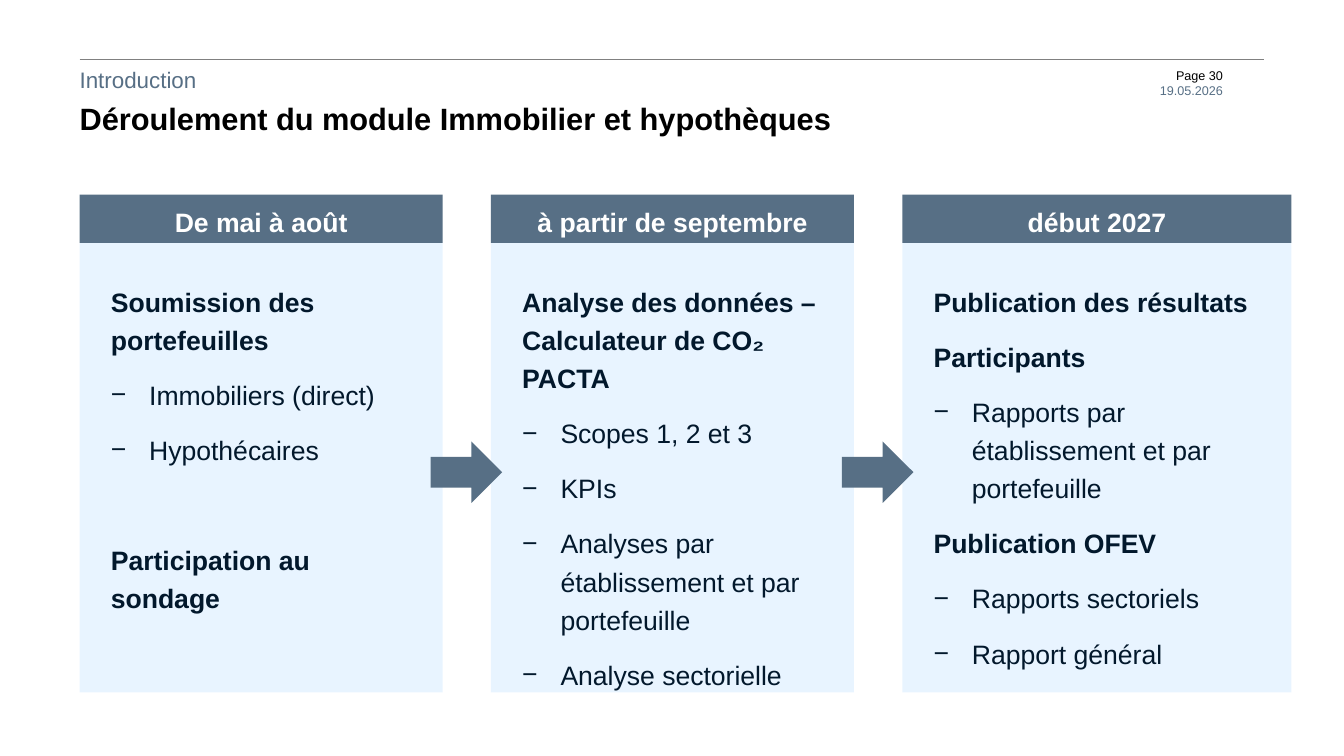
import pptx
import pptx.util
import pptx.dml.color
import pptx.enum.shapes
import pptx.enum.text
import lxml.etree
from pptx.oxml.ns import qn

Inches, Pt = pptx.util.Inches, pptx.util.Pt
SHAPE = pptx.enum.shapes.MSO_SHAPE
ALIGN = pptx.enum.text.PP_ALIGN
ANCHOR = pptx.enum.text.MSO_ANCHOR
COLORS = {"slate": "576F85", "pale": "D2EBFF", "navy": "02182C",
          "white": "FFFFFF", "black": "000000", "rule": "808080"}
LEFT, TOP, HEADER_H, BODY_H = 0.79, 1.93, 0.48, 4.46
PITCH = 4.08
ARROW_W, ARROW_H = 0.71, 0.61

# Each stage: width, heading, then (text, is bullet, space before in points)
STAGES = [
    (3.6, "De mai à août", [
        ("Soumission des portefeuilles", False, 0),
        ("Immobiliers (direct)", True, 6),
        ("Hypothécaires", True, 6),
        ("Participation au sondage", False, 45)]),
    (3.6, "à partir de septembre", [
        ("Analyse des données – Calculateur de CO₂ PACTA", False, 0),
        ("Scopes 1, 2 et 3", True, 6),
        ("KPIs", True, 6),
        ("Analyses par établissement et par portefeuille", True, 6),
        ("Analyse sectorielle", True, 6)]),
    (3.86, "début 2027", [
        ("Publication des résultats", False, 0),
        ("Participants", False, 6),
        ("Rapports par établissement et par portefeuille", True, 6),
        ("Publication OFEV", False, 6),
        ("Rapports sectoriels", True, 6),
        ("Rapport général", True, 6)]),
]


def rgb(name):
    return pptx.dml.color.RGBColor.from_string(COLORS[name])


def set_frame(tf, inset=0, top=0, anchor=ANCHOR.TOP):
    tf.word_wrap = True
    tf.auto_size = pptx.enum.text.MSO_AUTO_SIZE.NONE
    tf.margin_left = tf.margin_right = tf.margin_bottom = Inches(inset)
    tf.margin_top = Inches(top)
    tf.vertical_anchor = anchor


def add_dash(p):
    """Give the paragraph a hanging dash bullet."""
    pPr = p._p.get_or_add_pPr()
    pPr.set("marL", str(Inches(0.38)))
    pPr.set("indent", str(-Inches(0.38)))
    lxml.etree.SubElement(pPr, qn("a:buFont")).set("typeface", "Arial")
    lxml.etree.SubElement(pPr, qn("a:buChar")).set("char", "−")


def write(tf, text, size=19, color="navy", bold=False, align=ALIGN.LEFT,
          spacing=1.0, before=0, after=0, bullet=False):
    """Fill the empty first paragraph, or append one."""
    p = tf.add_paragraph() if tf.text else tf.paragraphs[0]
    p.alignment = align
    p.line_spacing = spacing
    p.space_before, p.space_after = Pt(before), Pt(after)
    if bullet:
        add_dash(p)
    r = p.add_run()
    r.text = text
    r.font.name, r.font.size, r.font.bold = "Arial", Pt(size), bold
    r.font.color.rgb = rgb(color)


def add_block(slide, kind, x, y, w, h, fill, alpha=None):
    sp = slide.shapes.add_shape(kind, Inches(x), Inches(y), Inches(w), Inches(h))
    sp.shadow.inherit = False
    sp.fill.solid()
    sp.fill.fore_color.rgb = rgb(fill)
    sp.line.fill.background()
    if alpha is not None:
        clr = sp._element.spPr.find(qn("a:solidFill"))[0]
        lxml.etree.SubElement(clr, qn("a:alpha")).set("val", str(alpha * 1000))
    return sp


def add_text_box(slide, x, y, w, h, anchor=ANCHOR.TOP):
    box = slide.shapes.add_textbox(Inches(x), Inches(y), Inches(w), Inches(h))
    set_frame(box.text_frame, anchor=anchor)
    return box.text_frame


def add_page_header(slide, x, y, w):
    rule = slide.shapes.add_connector(
        pptx.enum.shapes.MSO_CONNECTOR.STRAIGHT,
        Inches(x), Inches(y), Inches(x + w), Inches(y))
    rule.line.color.rgb = rgb("rule")
    rule.line.width = Pt(0.25)
    lxml.etree.SubElement(rule._element.spPr, qn("a:effectLst"))

    tf = add_text_box(slide, x + w - 2.04, y + 0.08, 1.63, 0.3)
    write(tf, "Page 30", size=9, color="black", align=ALIGN.RIGHT)
    write(tf, "19.05.2026", size=9, color="slate", align=ALIGN.RIGHT)

    tf = add_text_box(slide, x, y + 0.04, 10.34, 0.31, ANCHOR.MIDDLE)
    write(tf, "Introduction", size=16, color="slate")

    title = slide.shapes.title
    title.left, title.top = Inches(x), Inches(y + 0.39)
    title.width, title.height = Inches(10.34), Inches(0.31)
    set_frame(title.text_frame, anchor=ANCHOR.MIDDLE)
    write(title.text_frame, "Déroulement du module Immobilier et hypothèques",
          size=22, color="black", bold=True, spacing=1.2)


def add_stage(slide, x, y, w, heading, items):
    body = add_block(slide, SHAPE.RECTANGLE, x, y + HEADER_H, w, BODY_H, "pale", 50)
    set_frame(body.text_frame, 0.31, 0.36)
    for text, bullet, before in items:
        write(body.text_frame, text, bold=not bullet, spacing=1.2,
              before=before, after=6, bullet=bullet)

    header = add_block(slide, SHAPE.RECTANGLE, x, y, w, HEADER_H, "slate")
    set_frame(header.text_frame, 0.04, 0.04, ANCHOR.MIDDLE)
    write(header.text_frame, heading, color="white", bold=True,
          align=ALIGN.CENTER, spacing=1.2)


def add_process(slide, x, y):
    for i, (w, heading, items) in enumerate(STAGES):
        add_stage(slide, x + i * PITCH, y, w, heading, items)
    for i in range(1, len(STAGES)):
        add_block(slide, SHAPE.RIGHT_ARROW, x + i * PITCH - 0.6, y + 2.45,
                  ARROW_W, ARROW_H, "slate")


def main():
    prs = pptx.Presentation()
    prs.slide_width, prs.slide_height = Inches(13.33), Inches(7.5)
    slide = prs.slides.add_slide(prs.slide_layouts[5])
    add_page_header(slide, LEFT, 0.59, 11.75)
    add_process(slide, LEFT, TOP)
    prs.save("out.pptx")


if __name__ == "__main__":
    main()
